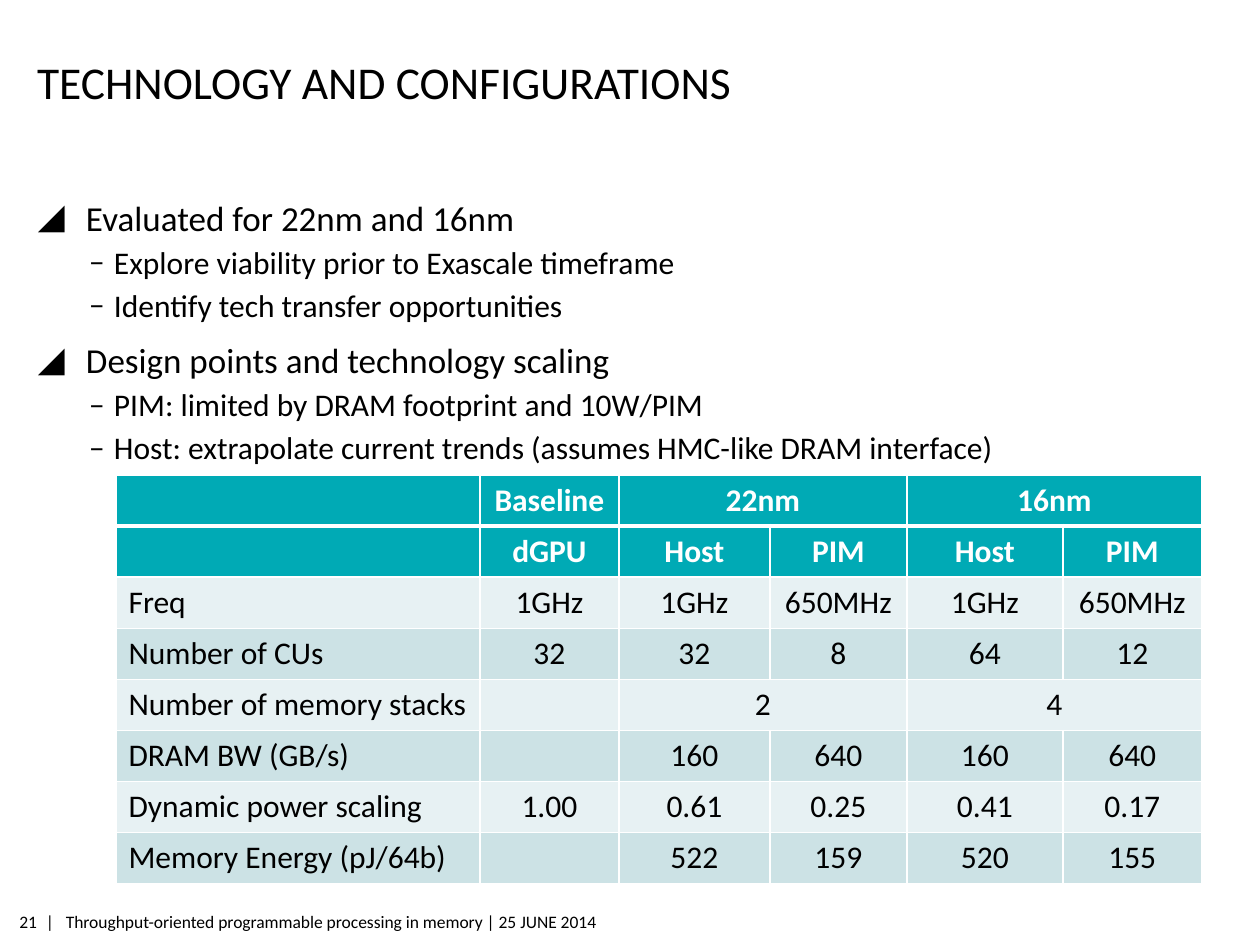
import dataclasses

import lxml.etree
import pptx
import pptx.dml.color
import pptx.enum.text
import pptx.oxml.ns
import pptx.util

ALIGN = pptx.enum.text.PP_ALIGN
ANCHOR = pptx.enum.text.MSO_ANCHOR
PX_PER_INCH = 126


@dataclasses.dataclass(frozen=True)
class Theme:
    font: str = "Calibri"
    text: str = "000000"
    inverse: str = "FFFFFF"
    header: str = "00AAB5"
    bands: tuple = ("E7F1F3", "CCE2E5")
    title_size: int = 26
    point_size: int = 20
    detail_size: int = 18
    footer_size: int = 10


THEME = Theme()

POINTS = [
    (0, "Evaluated for 22nm and 16nm"),
    (1, "Explore viability prior to Exascale timeframe"),
    (1, "Identify tech transfer opportunities"),
    (0, "Design points and technology scaling"),
    (1, "PIM: limited by DRAM footprint and 10W/PIM"),
    (1, "Host: extrapolate current trends (assumes HMC-like DRAM interface)"),
]

ROWS = [
    ["", "Baseline", "22nm", None, "16nm", None],
    ["", "dGPU", "Host", "PIM", "Host", "PIM"],
    ["Freq", "1GHz", "1GHz", "650MHz", "1GHz", "650MHz"],
    ["Number of CUs", "32", "32", "8", "64", "12"],
    ["Number of memory stacks", "", "2", None, "4", None],
    ["DRAM BW (GB/s)", "", "160", "640", "160", "640"],
    ["Dynamic power scaling", "1.00", "0.61", "0.25", "0.41", "0.17"],
    ["Memory Energy (pJ/64b)", "", "522", "159", "520", "155"],
]
HEADER_ROWS = 2
COLUMN_WIDTHS = [364, 139, 151, 137, 156, 139]
ROW_HEIGHT = 51


def px(n):
    return pptx.util.Emu(round(n * pptx.util.Inches(1) / PX_PER_INCH))


def rgb(value):
    return pptx.dml.color.RGBColor.from_string(value)


def add(parent, tag, **attributes):
    return lxml.etree.SubElement(parent, pptx.oxml.ns.qn(tag), attributes)


def style(p, size, color=THEME.text, bold=False):
    for r in p.runs:
        r.font.name = THEME.font
        r.font.size = pptx.util.Pt(size)
        r.font.bold = bold
        r.font.color.rgb = rgb(color)


def set_frame(tf, anchor, top, bottom, wrap=True):
    tf.auto_size = pptx.enum.text.MSO_AUTO_SIZE.NONE
    tf.word_wrap = wrap
    tf.vertical_anchor = anchor
    tf.margin_left = tf.margin_right = 0
    tf.margin_top, tf.margin_bottom = px(top), px(bottom)


def add_title(s, x, y, w, h):
    sp = s.shapes.title
    sp.left, sp.top, sp.width, sp.height = map(px, (x, y, w, h))
    tf = sp.text_frame
    set_frame(tf, ANCHOR.BOTTOM, 6, 0)
    tf.text = "TECHNOLOGY AND CONFIGURATIONS"
    p = tf.paragraphs[0]
    p.alignment = ALIGN.LEFT
    style(p, THEME.title_size)


def add_points(s, x, y, w, h):
    levels = [
        ("◢", 48, 48, 8, THEME.point_size),
        ("‒", 76, 25, 3, THEME.detail_size),
    ]
    tf = s.shapes.add_textbox(*map(px, (x, y, w, h))).text_frame
    set_frame(tf, ANCHOR.TOP, 6, 6)
    for i, (level, text) in enumerate(POINTS):
        bullet, margin, hang, before, size = levels[level]
        p = tf.add_paragraph() if i else tf.paragraphs[0]
        p.text = text
        p.level = level
        pPr = p._p.get_or_add_pPr()
        pPr.set("marL", str(px(margin)))
        pPr.set("indent", str(-px(hang)))
        add(add(pPr, "a:buClr"), "a:srgbClr", val=THEME.text)
        add(pPr, "a:buFont", typeface=THEME.font)
        add(pPr, "a:buChar", char=bullet)
        p.space_before = pptx.util.Pt(before if i else 0)
        style(p, size)


def set_borders(cell, widths):
    tcPr = cell._tc.get_or_add_tcPr()
    for side, width in zip("LRTB", widths):
        ln = add(tcPr, f"a:ln{side}", w=str(pptx.util.Pt(width)))
        add(add(ln, "a:solidFill"), "a:srgbClr", val=THEME.inverse)


def add_results(s, x, y):
    w, h = sum(COLUMN_WIDTHS), ROW_HEIGHT * len(ROWS)
    shape = s.shapes.add_table(len(ROWS), len(COLUMN_WIDTHS), *map(px, (x, y, w, h)))
    table = shape.table
    for column, width in zip(table.columns, COLUMN_WIDTHS):
        column.width = px(width)
    for i, values in enumerate(ROWS):
        table.rows[i].height = px(ROW_HEIGHT)
        is_header = i < HEADER_ROWS
        fill = THEME.header if is_header else THEME.bands[i % 2]
        color = THEME.inverse if is_header else THEME.text
        for j, value in enumerate(values):
            cell = table.cell(i, j)
            set_borders(cell, (1, 1, 3 if i == 1 else 1, 3 if i == 0 else 1))
            cell.fill.solid()
            cell.fill.fore_color.rgb = rgb(fill)
            if value is None:
                table.cell(i, j - 1).merge(cell)
            elif value:
                cell.text = value
                p = cell.text_frame.paragraphs[0]
                p.alignment = ALIGN.CENTER if j else ALIGN.LEFT
                style(p, THEME.detail_size, color, is_header)


def add_footer(s, x, y, h):
    parts = [
        (0, 20, "21", ALIGN.RIGHT),
        (
            29,
            580,
            "|   Throughput-oriented programmable processing in memory | 25 JUNE 2014",
            ALIGN.LEFT,
        ),
    ]
    for offset, w, text, alignment in parts:
        tf = s.shapes.add_textbox(*map(px, (x + offset, y, w, h))).text_frame
        set_frame(tf, ANCHOR.MIDDLE, 5, 5, wrap=False)
        tf.text = text
        p = tf.paragraphs[0]
        p.alignment = alignment
        style(p, THEME.footer_size)


def main():
    prs = pptx.Presentation()
    prs.slide_width, prs.slide_height = px(1260), px(945)
    s = prs.slides.add_slide(prs.slide_layouts.get_by_name("Title Only"))
    add_title(s, 37, 43, 1058, 66)
    add_points(s, 38, 190, 1184, 285)
    add_results(s, 116, 475)
    add_footer(s, 17, 905, 33)
    prs.save("out.pptx")


if __name__ == "__main__":
    main()
